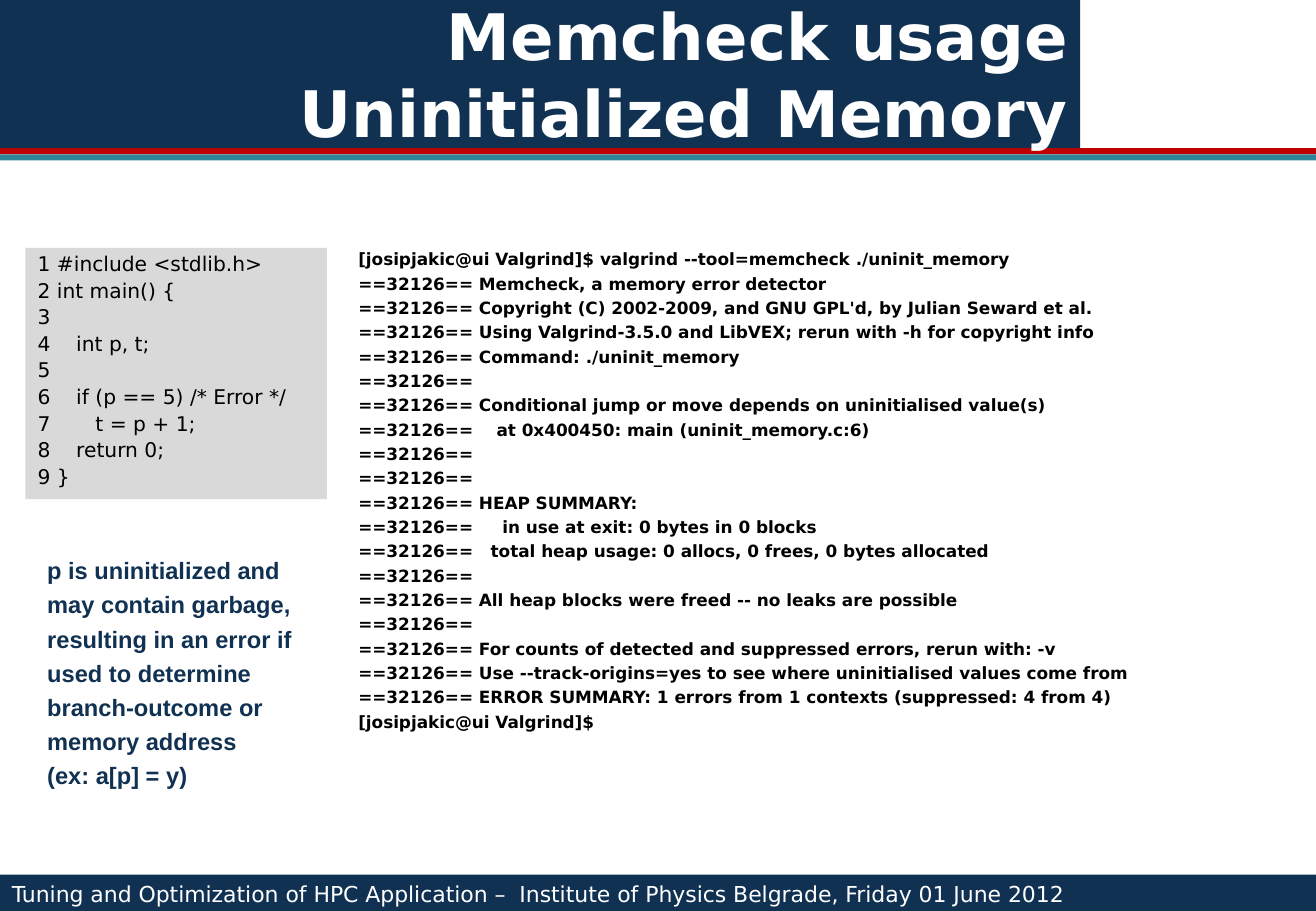
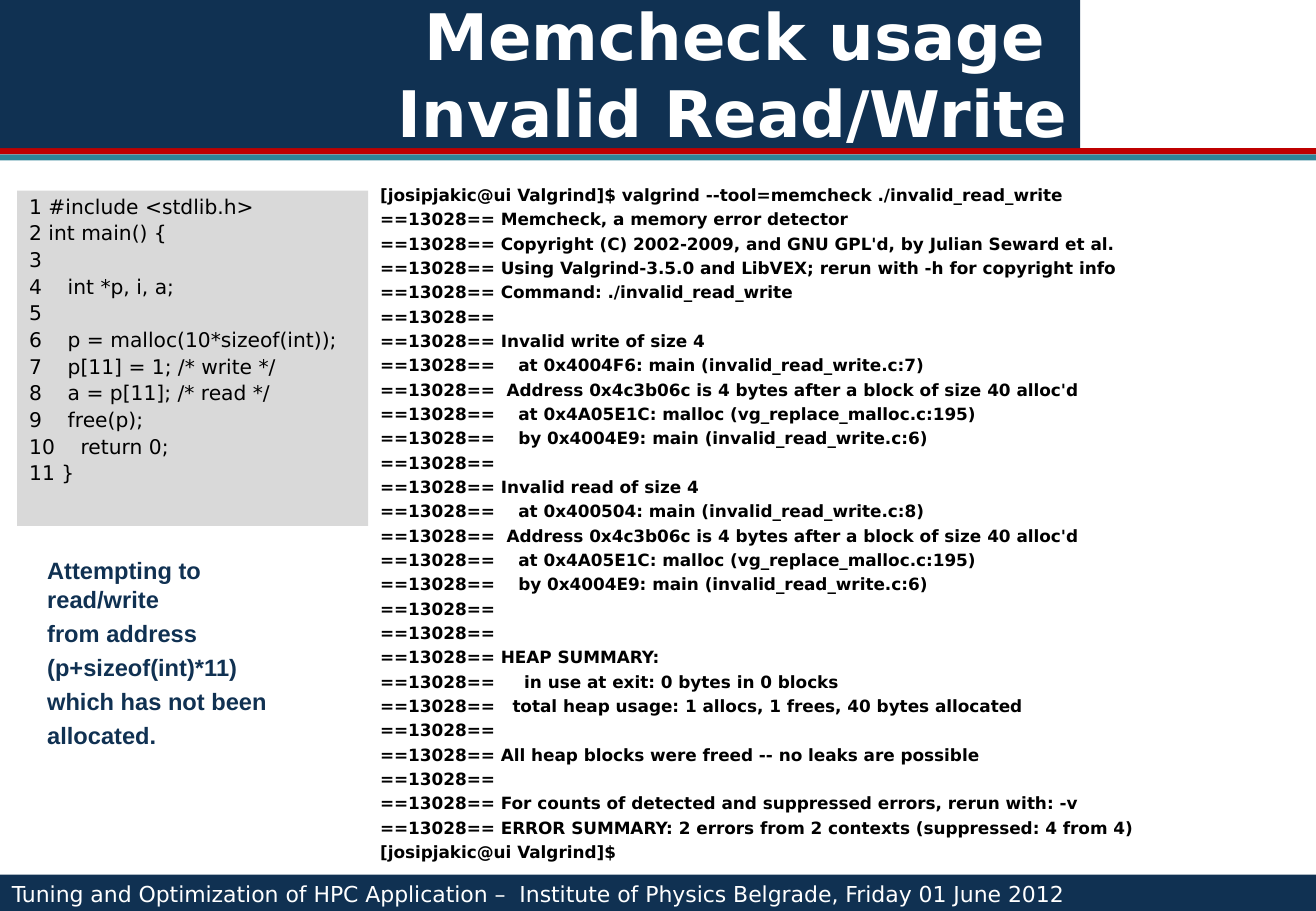
from lxml import etree
from pptx import Presentation
from pptx.dml.color import RGBColor
from pptx.enum.shapes import MSO_SHAPE
from pptx.enum.text import MSO_ANCHOR, MSO_AUTO_SIZE, PP_ALIGN
from pptx.oxml.ns import qn
from pptx.util import Inches, Pt

RECTANGLE = MSO_SHAPE.RECTANGLE
TOP, MIDDLE = MSO_ANCHOR.TOP, MSO_ANCHOR.MIDDLE
LEFT, RIGHT = PP_ALIGN.LEFT, PP_ALIGN.RIGHT
FIXED, GROW = MSO_AUTO_SIZE.NONE, MSO_AUTO_SIZE.SHAPE_TO_FIT_TEXT

# Colours
NAVY = RGBColor(0x10, 0x31, 0x52)
RED = RGBColor(0xBF, 0x00, 0x00)
TEAL = RGBColor(0x2E, 0x84, 0x97)
GREY = RGBColor(0xD9, 0xD9, 0xD9)
BLACK = RGBColor(0x00, 0x00, 0x00)
WHITE = RGBColor(0xFF, 0xFF, 0xFF)

# Page geometry in inches
WIDTH, HEIGHT = 10.83, 7.5
TITLE_AREA = (-0.01, -0.01, 8.9, 1.23)
BANDS = ((1.27, TEAL), (1.22, RED))
BAND_HEIGHT = 0.05
FOOTER_AREA = (0, 7.2, WIDTH, 0.32)
FOOTER = ("Tuning and Optimization of HPC Application –  "
          "Institute of Physics Belgrade, Friday 01 June 2012")

# Text styles: font attributes, colour, paragraph attributes, gap between lines
SANS = "DejaVu Sans"
TITLE_STYLE = (dict(name=SANS, size=Pt(38), bold=True), WHITE,
               dict(alignment=RIGHT), 0)
FOOTER_STYLE = (dict(name=SANS, size=Pt(13)), WHITE, dict(alignment=LEFT), 0)
CODE_STYLE = (dict(name=SANS, size=Pt(12)), BLACK,
              dict(alignment=LEFT, line_spacing=0.9), 2.83)
LOG_STYLE = (dict(name=SANS, size=Pt(10), bold=True), BLACK,
             dict(alignment=LEFT), 2.4)
REMARK_STYLE = (dict(name="Arial", size=Pt(14), bold=True), NAVY,
                dict(alignment=LEFT), 3.45)

# Content
PROMPT = "[josipjakic@ui Valgrind]$"
BANNER = """Memcheck, a memory error detector
Copyright (C) 2002-2009, and GNU GPL'd, by Julian Seward et al.
Using Valgrind-3.5.0 and LibVEX; rerun with -h for copyright info"""

UNINIT_CODE = """#include <stdlib.h>
int main() {

   int p, t;

   if (p == 5) /* Error */
      t = p + 1;
   return 0;
}"""
UNINIT_LOG = """
Conditional jump or move depends on uninitialised value(s)
   at 0x400450: main (uninit_memory.c:6)


HEAP SUMMARY:
    in use at exit: 0 bytes in 0 blocks
  total heap usage: 0 allocs, 0 frees, 0 bytes allocated

All heap blocks were freed -- no leaks are possible

For counts of detected and suppressed errors, rerun with: -v
Use --track-origins=yes to see where uninitialised values come from
ERROR SUMMARY: 1 errors from 1 contexts (suppressed: 4 from 4)"""
UNINIT_REMARK = """p is uninitialized and
may contain garbage,
resulting in an error if
used to determine
branch-outcome or
memory address
(ex: a[p] = y)"""

INVALID_CODE = """#include <stdlib.h>
int main() {

   int *p, i, a;

   p = malloc(10*sizeof(int));
   p[11] = 1; /* write */
   a = p[11]; /* read */
   free(p);
   return 0;
}"""
INVALID_LOG = """
Invalid write of size 4
   at 0x4004F6: main (invalid_read_write.c:7)
 Address 0x4c3b06c is 4 bytes after a block of size 40 alloc'd
   at 0x4A05E1C: malloc (vg_replace_malloc.c:195)
   by 0x4004E9: main (invalid_read_write.c:6)

Invalid read of size 4
   at 0x400504: main (invalid_read_write.c:8)
 Address 0x4c3b06c is 4 bytes after a block of size 40 alloc'd
   at 0x4A05E1C: malloc (vg_replace_malloc.c:195)
   by 0x4004E9: main (invalid_read_write.c:6)


HEAP SUMMARY:
    in use at exit: 0 bytes in 0 blocks
  total heap usage: 1 allocs, 1 frees, 40 bytes allocated

All heap blocks were freed -- no leaks are possible

For counts of detected and suppressed errors, rerun with: -v
ERROR SUMMARY: 2 errors from 2 contexts (suppressed: 4 from 4)"""
INVALID_REMARK = """Attempting to read/write
from address
(p+sizeof(int)*11)
which has not been
allocated."""


def set_all(target, values):
    for attribute, value in values.items():
        setattr(target, attribute, value)


def place(shape, area):
    names = ("left", "top", "width", "height")
    set_all(shape, dict(zip(names, map(Inches, area))))


def paint(shape, color):
    shape.fill.solid()
    shape.fill.fore_color.rgb = color
    shape.line.fill.background()


def write(frame, lines, style, anchor=TOP, fit=FIXED):
    """Fill a text frame with one unbulleted paragraph per line."""
    font_values, color, paragraph_values, gap = style
    set_all(frame, dict(
        word_wrap=True, auto_size=fit, vertical_anchor=anchor,
        margin_left=Inches(0.1), margin_right=Inches(0.1),
        margin_top=Inches(0.05), margin_bottom=Inches(0.05)))
    for index, line in enumerate(lines):
        paragraph = frame.add_paragraph() if index else frame.paragraphs[0]
        paragraph.text = line
        properties = paragraph._p.get_or_add_pPr()
        properties.set("marL", "0")
        properties.set("indent", "0")
        etree.SubElement(properties, qn("a:buNone"))
        set_all(paragraph, paragraph_values)
        paragraph.space_before = Pt(gap if index else 0)
        set_all(paragraph.font, font_values)
        paragraph.font.color.rgb = color


def add_bar(slide, area, color):
    bar = slide.shapes.add_shape(RECTANGLE, *map(Inches, area))
    bar.shadow.inherit = False
    paint(bar, color)
    return bar


def add_text(slide, area, lines, style):
    box = slide.shapes.add_textbox(*map(Inches, area))
    write(box.text_frame, lines, style, fit=GROW)


def move_bands_to_layout(slide, layout):
    """Give the layout the two header bands, behind all slide content."""
    tree = layout.placeholders[0].element.getparent()
    for placeholder in list(layout.placeholders):
        if placeholder.placeholder_format.idx >= 10:
            tree.remove(placeholder.element)
    for top, color in BANDS:
        band = add_bar(slide, (0, top, WIDTH, BAND_HEIGHT), color)
        band.text_frame.clear()
        tree.append(band.element)


def number_lines(code):
    return [f"{number} {line}".rstrip()
            for number, line in enumerate(code.split("\n"), 1)]


def session_lines(process, program, report):
    """Terminal session: command, report lines with process tag, prompt."""
    output = f"{BANNER}\nCommand: ./{program}\n{report.removeprefix(chr(10))}"
    output = output.replace(f"./{program}\n", f"./{program}\n\n", 1)
    tagged = [f"=={process}== {line}".rstrip() for line in output.split("\n")]
    return [f"{PROMPT} valgrind --tool=memcheck ./{program}", *tagged, PROMPT]


def fill_slide(slide, title, code, code_area, log, log_area, remark,
               remark_height):
    heading, listing = slide.placeholders
    place(heading, TITLE_AREA)
    paint(heading, NAVY)
    write(heading.text_frame, [title], TITLE_STYLE, MIDDLE)

    place(listing, code_area)
    paint(listing, GREY)
    write(listing.text_frame, number_lines(code), CODE_STYLE)

    footer = add_bar(slide, FOOTER_AREA, NAVY)
    write(footer.text_frame, [FOOTER], FOOTER_STYLE, MIDDLE)

    add_text(slide, log_area, log, LOG_STYLE)
    add_text(slide, (0.29, 4.53, 2.3, remark_height), remark.split("\n"),
             REMARK_STYLE)


def main():
    deck = Presentation()
    deck.slide_width, deck.slide_height = Inches(WIDTH), Inches(HEIGHT)
    layout = deck.slide_layouts[1]

    # Uninitialized memory
    uninit = deck.slides.add_slide(layout)
    move_bands_to_layout(uninit, layout)
    fill_slide(uninit, "Memcheck usage Uninitialized Memory",
               UNINIT_CODE, (0.21, 2.04, 2.48, 2.07),
               session_lines(32126, "uninit_memory", UNINIT_LOG),
               (2.85, 2, 7.98, 4.11), UNINIT_REMARK, 2.03)

    # Invalid read and write
    invalid = deck.slides.add_slide(layout)
    fill_slide(invalid, "Memcheck usage \vInvalid Read/Write",
               INVALID_CODE, (0.14, 1.57, 2.89, 2.76),
               session_lines(13028, "invalid_read_write", INVALID_LOG),
               (3.03, 1.47, 7.8, 5.72), INVALID_REMARK, 1.7)

    deck.save("out.pptx")


if __name__ == "__main__":
    main()
